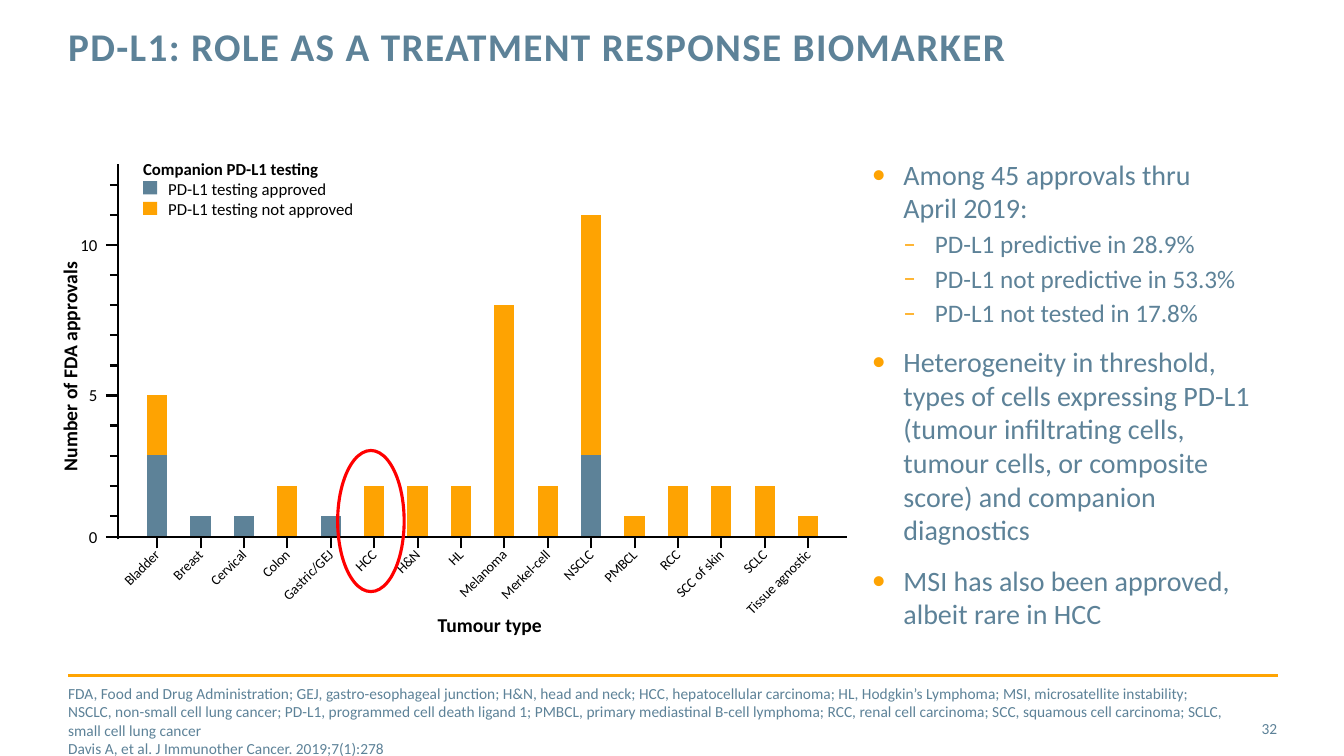
from dataclasses import dataclass

from lxml.etree import SubElement
from pptx import Presentation
from pptx.chart.data import CategoryChartData
from pptx.dml.color import RGBColor
from pptx.enum.chart import XL_AXIS_CROSSES, XL_CHART_TYPE, XL_TICK_MARK
from pptx.enum.shapes import MSO_CONNECTOR, MSO_SHAPE
from pptx.enum.text import MSO_ANCHOR, PP_ALIGN
from pptx.oxml import parse_xml
from pptx.oxml.ns import nsdecls, qn
from pptx.util import Pt


@dataclass(frozen=True)
class Theme:
    font: str = "Calibri"
    slate: str = "5D8298"
    amber: str = "FEA302"
    rule: str = "FFA402"
    ink: str = "000000"
    alert: str = "FF0000"
    title: float = 28
    body: float = 20
    detail: float = 18
    axis_title: float = 14
    label: float = 12
    note: float = 11
    category: float = 10


THEME = Theme()

TUMOUR_TYPES = [
    # name, testing approved, testing not approved
    ("Bladder", 3, 2),
    ("Breast", 1, None),
    ("Cervical", 1, None),
    ("Colon", None, 2),
    ("Gastric/GEJ", 1, None),
    ("HCC", None, 2),
    ("H&N", None, 2),
    ("HL", None, 2),
    ("Melanoma", None, 8),
    ("Merkel-cell", None, 2),
    ("NSCLC", 3, 8),
    ("PMBCL", None, 1),
    ("RCC", None, 2),
    ("SCC of skin", None, 2),
    ("SCLC", None, 2),
    ("Tissue agnostic", None, 1),
]
SERIES = [("PD-L1 testing approved", THEME.slate),
          ("PD-L1 testing not approved", THEME.amber)]

# Plot area in points; the value axis starts a little above zero.
PLOT_LEFT, PLOT_TOP, PLOT_BOTTOM = 96.8, 117.4, 383.8
PITCH, UNIT, AXIS_START = 31, 21.46, 0.28
AXIS_LEFT, AXIS_RIGHT = 84.2, 604.8

FINDINGS = [
    ("Among 45 approvals thru \vApril 2019:", 0),
    ("PD-L1 predictive in 28.9%", 1),
    ("PD-L1 not predictive in 53.3%", 1),
    ("PD-L1 not tested in 17.8%", 1),
    ("Heterogeneity in threshold, types of cells expressing PD-L1 (tumour infiltrating "
     "cells, tumour cells, or composite score) and companion diagnostics", 0),
    ("MSI has also been approved, albeit rare in HCC", 0),
]
ABBREVIATIONS = (
    "FDA, Food and Drug Administration; GEJ, gastro-esophageal junction; H&N, head and neck; "
    "HCC, hepatocellular carcinoma; HL, Hodgkin’s Lymphoma; MSI, microsatellite instability; "
    "NSCLC, non-small cell lung cancer; PD-L1, programmed cell death ligand 1; PMBCL, primary "
    "mediastinal B-cell lymphoma; RCC, renal cell carcinoma; SCC, squamous cell carcinoma; "
    "SCLC, small cell lung cancer")
CITATION = "Davis A, et al. J Immunother Cancer. 2019;7(1):278"


def set_font(font, size, ink, bold=False):
    font.name, font.size, font.bold = THEME.font, Pt(size), bold
    font.color.rgb = RGBColor.from_string(ink)


def paint(fill, code):
    fill.solid()
    fill.fore_color.rgb = RGBColor.from_string(code)


def write(para, text, size=THEME.label, ink=THEME.slate, bold=False, align=None,
          before=0, line=None, tracking=0, bullet=None, indent=0, hang=0):
    """Fill a paragraph; line is a Pt length or a multiple, the rest is in points."""
    para.text = text
    para.alignment = align
    para.space_before = Pt(before)
    para.line_spacing = line
    properties = para._p.get_or_add_pPr()
    properties.set("marL", str(Pt(indent)))
    properties.set("indent", str(Pt(-hang)))
    if bullet:
        bullet_colour = SubElement(properties, qn("a:buClr"))
        SubElement(bullet_colour, qn("a:srgbClr")).set("val", THEME.amber)
        SubElement(properties, qn("a:buFont")).set("typeface", THEME.font)
        SubElement(properties, qn("a:buChar")).set("char", bullet)
    for span in para.runs:
        set_font(span.font, size, ink, bold)
        if tracking:
            span._r.get_or_add_rPr().set("spc", str(tracking * 100))


class SlideBuilder:
    def __init__(self, deck):
        self.theme = THEME
        self.page = deck.slides.add_slide(deck.slide_layouts[6])

    def text(self, left, top, width, height, items, anchor=MSO_ANCHOR.TOP, turn=0):
        """Add a text box; items are pairs of text and write() keywords."""
        box = self.page.shapes.add_textbox(Pt(left), Pt(top), Pt(width), Pt(height))
        box.rotation = turn
        frame = box.text_frame
        frame.word_wrap = True
        frame.vertical_anchor = anchor
        frame.margin_left = frame.margin_right = frame.margin_top = frame.margin_bottom = 0
        for index, (text, style) in enumerate(items):
            para = frame.add_paragraph() if index else frame.paragraphs[0]
            write(para, text, **style)

    def shape(self, kind, left, top, width, height, fill=None, line=None, weight=0):
        shape = self.page.shapes.add_shape(kind, Pt(left), Pt(top), Pt(width), Pt(height))
        shape.shadow.inherit = False
        if fill:
            paint(shape.fill, fill)
        else:
            shape.fill.background()
        if line:
            paint(shape.line.fill, line)
            shape.line.width = Pt(weight)
        else:
            shape.line.fill.background()

    def line(self, x1, y1, x2, y2, ink=THEME.ink, weight=1.5):
        line = self.page.shapes.add_connector(
            MSO_CONNECTOR.STRAIGHT, Pt(x1), Pt(y1), Pt(x2), Pt(y2))
        paint(line.line.fill, ink)
        line.line.width = Pt(weight)
        SubElement(line._element.spPr, qn("a:effectLst"))

    def columns(self, left, top, width, height):
        """Add the stacked columns with their slanted category labels."""
        data = CategoryChartData(number_format="0")
        names, *counts = zip(*TUMOUR_TYPES)
        data.categories = names
        for (name, _), values in zip(SERIES, counts):
            data.add_series(name, values)
        chart = self.page.shapes.add_chart(
            XL_CHART_TYPE.COLUMN_STACKED, Pt(left), Pt(top), Pt(width), Pt(height), data).chart
        chart.has_title = chart.has_legend = False
        set_font(chart.font, self.theme.category, self.theme.ink)
        columns = chart.plots[0]
        columns.gap_width, columns.overlap, columns.vary_by_categories = 115, 100, False
        for series, (_, fill) in zip(columns.series, SERIES):
            paint(series.format.fill, fill)
        values, categories = chart.value_axis, chart.category_axis
        values.has_major_gridlines = values.visible = False
        values.minimum_scale = AXIS_START
        values.maximum_scale = round(AXIS_START + (PLOT_BOTTOM - PLOT_TOP) / UNIT, 2)
        values.crosses = XL_AXIS_CROSSES.MINIMUM
        categories.major_tick_mark = XL_TICK_MARK.OUTSIDE
        categories.format.line.fill.background()
        set_font(categories.tick_labels.font, self.theme.category, self.theme.ink)
        labels = categories._element.find(qn("c:txPr")).find(qn("a:bodyPr"))
        labels.set("rot", str(-45 * 60000))
        share = zip("xywh", ((PLOT_LEFT - left) / width, (PLOT_TOP - top) / height,
                             PITCH * len(names) / width, (PLOT_BOTTOM - PLOT_TOP) / height))
        sizes = "".join(f'<c:{key} val="{value:.4f}"/>' for key, value in share)
        area = chart._chartSpace.chart.plotArea
        for layout in area.findall(qn("c:layout")):
            area.remove(layout)
        area.insert(0, parse_xml(
            f'<c:layout {nsdecls("c")}><c:manualLayout><c:layoutTarget val="inner"/>'
            f'<c:xMode val="edge"/><c:yMode val="edge"/>{sizes}</c:manualLayout></c:layout>'))

    def axes(self):
        """Draw axis lines, ticks, value labels and axis titles around the columns."""
        self.line(AXIS_LEFT, PLOT_BOTTOM + 1.4, AXIS_LEFT, PLOT_TOP)
        self.line(AXIS_LEFT, PLOT_BOTTOM, AXIS_RIGHT, PLOT_BOTTOM)
        label = dict(ink=self.theme.ink, align=PP_ALIGN.RIGHT, line=0.9)
        for value in range(13):
            y = PLOT_BOTTOM - max(value - AXIS_START, 0) * UNIT
            major = value % 5 == 0
            self.line(AXIS_LEFT - (8.6 if major else 5.7), y, AXIS_LEFT, y)
            if major:
                self.text(49.5, y - 6.2, 20, 13, [(str(value), label)])
        for index in range(len(TUMOUR_TYPES)):
            x = PLOT_LEFT + (index + 0.5) * PITCH
            self.line(x, PLOT_BOTTOM + 7.9, x, PLOT_BOTTOM)
        title = dict(size=self.theme.axis_title, ink=self.theme.ink, bold=True,
                     align=PP_ALIGN.CENTER, line=0.9)
        self.text(-29.2, 254.2, 160, 15.1, [("Number of FDA approvals", title)], turn=270)
        self.text(299.9, 439.9, 100, 15.1, [("Tumour type", title)])

    def legend(self, left, top):
        pitch, swatch = 14.8, 10
        items = [("Companion PD-L1 testing", dict(ink=self.theme.ink, bold=True))]
        items += [(name, dict(ink=self.theme.ink, indent=18)) for name, _ in SERIES]
        self.text(left, top, 152, 44, items)
        for row, (_, fill) in enumerate(SERIES, 1):
            self.shape(MSO_SHAPE.RECTANGLE, left, top + row * pitch + 1.3, swatch, 9.4, fill)


def main():
    deck = Presentation()
    deck.slide_width, deck.slide_height = Pt(960), Pt(540)
    slide = SlideBuilder(deck)
    slide.line(48.7, 482.4, 913, 482.4, THEME.rule, 2)
    slide.text(48.7, 19.4, 760, 63, [("PD-L1: ROLE AS A TREATMENT RESPONSE BIOMARKER", dict(
        size=THEME.title, bold=True, line=Pt(30), tracking=1))])
    slide.columns(80, 108, 530, 345)
    slide.axes()
    slide.legend(102.2, 113.3)
    slide.shape(MSO_SHAPE.OVAL, 241.2, 321.8, 47.5, 100.8, line=THEME.alert, weight=2.25)

    levels = [dict(size=THEME.body, bullet="•", indent=22.5, hang=22.5, before=12),
              dict(size=THEME.detail, bullet="–", indent=45, hang=22.5, before=3)]
    findings = [(text, dict(levels[level])) for text, level in FINDINGS]
    findings[0][1]["before"] = 0
    slide.text(622.8, 112.3, 286, 356.4, findings)

    note = dict(size=THEME.note)
    slide.text(48.7, 500.4, 828, 28.8, [(ABBREVIATIONS, note), (CITATION, note)],
               anchor=MSO_ANCHOR.MIDDLE)
    slide.text(850.3, 506.2, 62, 28.8, [("32", dict(note, align=PP_ALIGN.RIGHT))],
               anchor=MSO_ANCHOR.MIDDLE)
    deck.save("out.pptx")


if __name__ == "__main__":
    main()
